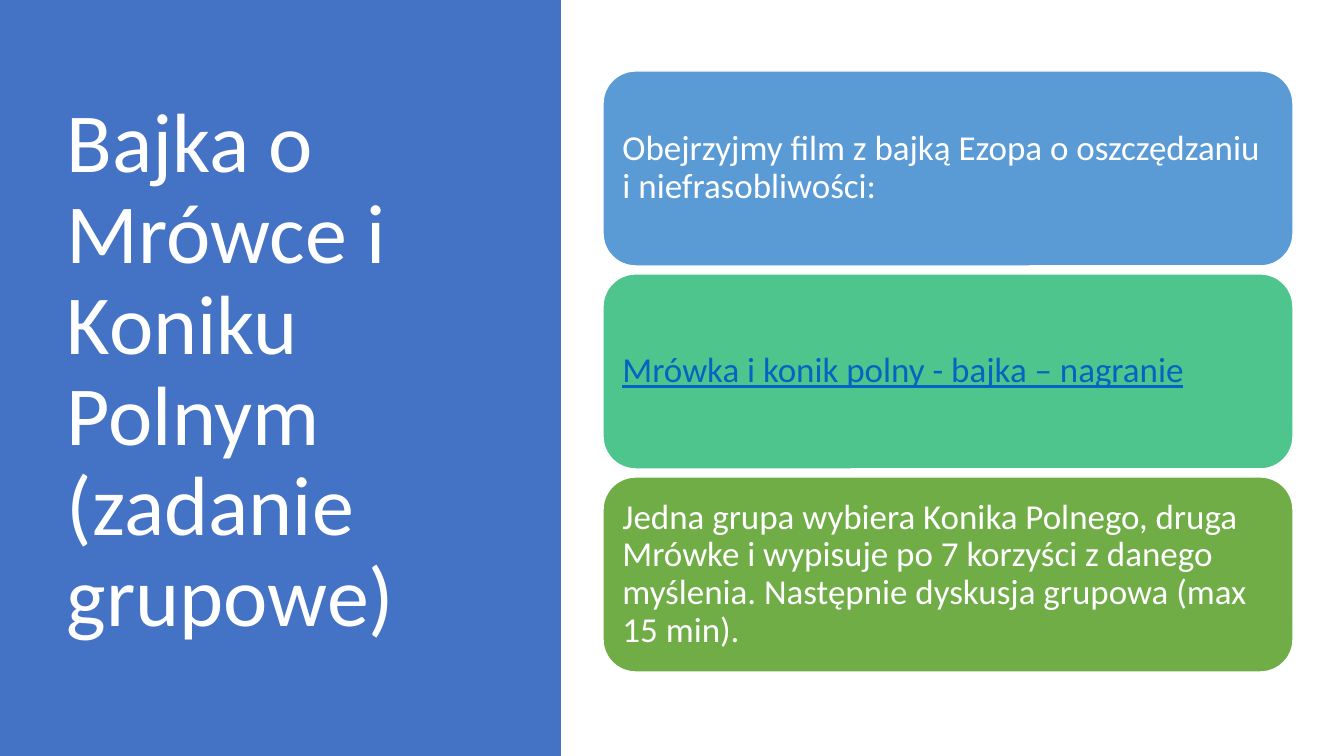
"""Build the slide about the fable of the Ant and the Grasshopper."""
from dataclasses import dataclass

from pptx import Presentation
from pptx.dml.color import RGBColor
from pptx.enum.shapes import MSO_SHAPE
from pptx.enum.text import MSO_ANCHOR, PP_ALIGN
from pptx.util import Emu, Pt


@dataclass
class Theme:
    font: str = "Calibri"
    white: str = "FFFFFF"
    panel: str = "4472C4"
    blue: str = "5B9BD5"
    mint: str = "4DC58D"
    green: str = "70AD47"
    link: str = "0563C1"
    title: int = 60
    body: int = 25


theme = Theme()
SCALE = 12192000 / 1344


def px(*sizes):
    return [Emu(round(size * SCALE)) for size in sizes]


def write(shape, text, size, color, under=False):
    frame = shape.text_frame
    frame.word_wrap = True
    frame.vertical_anchor = MSO_ANCHOR.MIDDLE
    frame.margin_left, frame.margin_right = px(10, 10)
    frame.text = text
    para = frame.paragraphs[0]
    para.alignment = PP_ALIGN.LEFT
    para.line_spacing = 0.9
    for run in para.runs:
        run.font.name = theme.font
        run.font.size = Pt(size)
        run.font.color.rgb = RGBColor.from_string(color)
        run.font.underline = under


deck = Presentation()
deck.slide_width, deck.slide_height = px(1344, 756)
slide = deck.slides.add_slide(deck.slide_layouts[6])
shapes = slide.shapes

panel = shapes.add_shape(MSO_SHAPE.RECTANGLE, *px(0, 0, 561, 756))
panel.shadow.inherit = False
panel.fill.solid()
panel.fill.fore_color.rgb = RGBColor.from_string(theme.panel)
panel.line.fill.background()

title = shapes.add_textbox(*px(57, 69, 419, 607))
write(title, "Bajka o Mrówce i Koniku Polnym\v(zadanie grupowe)",
      theme.title, theme.white)

cards = [
    ("Obejrzyjmy film z bajką Ezopa o oszczędzaniu i niefrasobliwości:",
     theme.blue, theme.white, False),
    ("Mrówka i konik polny - bajka – nagranie",
     theme.mint, theme.link, True),
    ("Jedna grupa wybiera Konika Polnego, druga Mrówke i wypisuje po 7 "
     "korzyści z danego myślenia. Następnie dyskusja grupowa (max 15 min).",
     theme.green, theme.white, False),
]
TOP, HIGH, GAP = 71, 195, 8
for row, (text, fill, color, under) in enumerate(cards):
    top = TOP + row * (HIGH + GAP)
    card = shapes.add_shape(MSO_SHAPE.ROUNDED_RECTANGLE,
                            *px(603, top, 690, HIGH))
    card.shadow.inherit = False
    card.fill.solid()
    card.fill.fore_color.rgb = RGBColor.from_string(fill)
    card.line.color.rgb = RGBColor.from_string(theme.white)
    card.line.width = Pt(1)
    write(card, text, theme.body, color, under)

deck.save("out.pptx")
